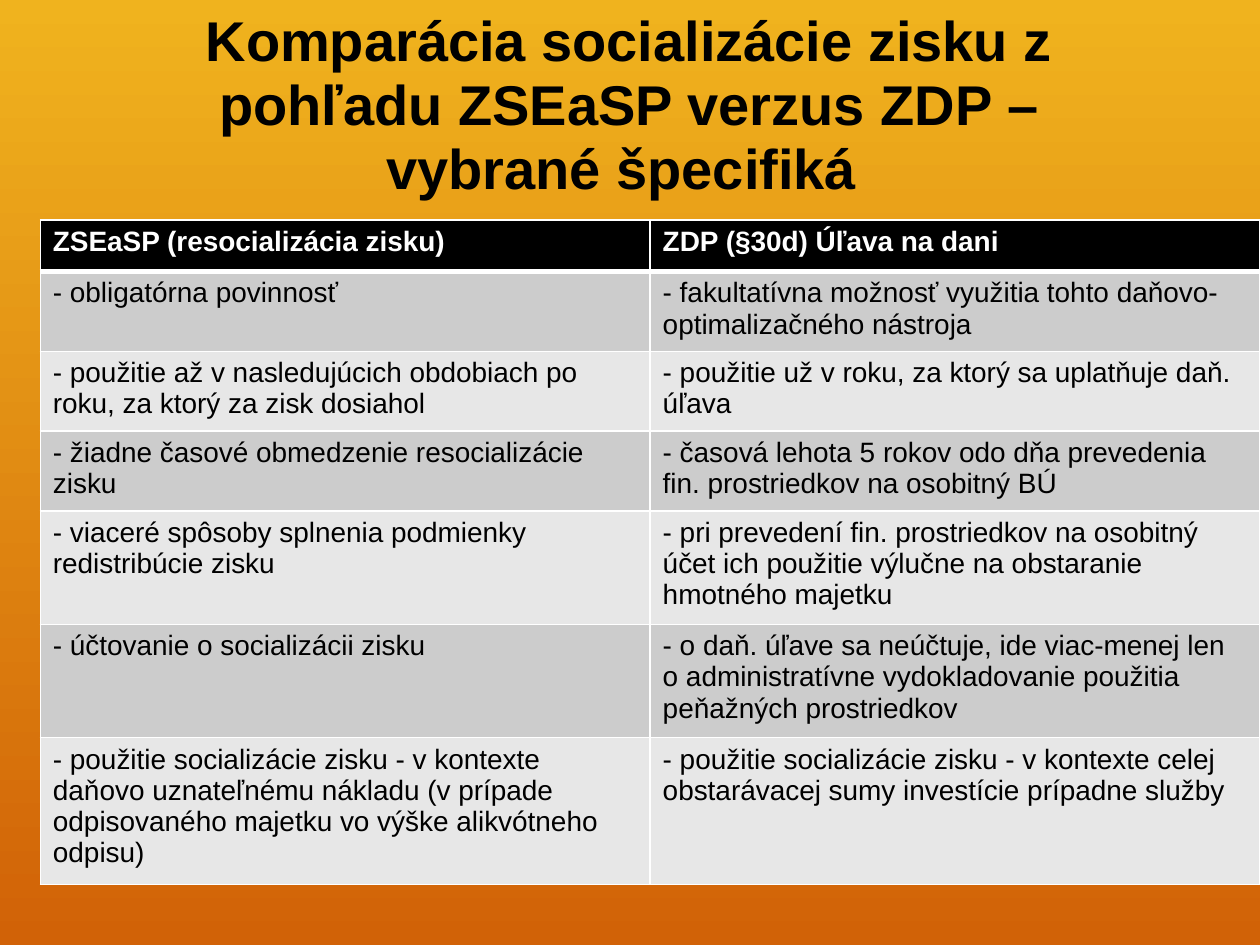
from lxml import etree
from pptx import Presentation, util as u
from pptx.dml import color
from pptx.enum import text
from pptx.oxml import ns

WIDTH, HEIGHT = u.Inches(10), u.Inches(7.5)
BLACK, WHITE = "000000", "FFFFFF"
BANDS = ["CCCCCC", "E7E7E7"]
TITLE = "Komparácia socializácie zisku z pohľadu ZSEaSP verzus ZDP – vybrané špecifiká "
COMPARISON = [
    ("ZSEaSP (resocializácia zisku)", "ZDP (§30d) Úľava na dani"),
    ("- obligatórna povinnosť",
     "- fakultatívna možnosť využitia tohto daňovo-optimalizačného nástroja"),
    ("- použitie až v nasledujúcich obdobiach po roku, za ktorý za zisk dosiahol",
     "- použitie už v roku, za ktorý sa uplatňuje daň. úľava"),
    ("- žiadne časové obmedzenie resocializácie zisku",
     "- časová lehota 5 rokov odo dňa prevedenia fin. prostriedkov na osobitný BÚ"),
    ("- viaceré spôsoby splnenia podmienky redistribúcie zisku",
     "- pri prevedení fin. prostriedkov na osobitný účet ich použitie výlučne na obstaranie "
     "hmotného majetku"),
    ("- účtovanie o socializácii zisku",
     "- o daň. úľave sa neúčtuje, ide viac-menej len o administratívne vydokladovanie použitia "
     "peňažných prostriedkov"),
    ("- použitie socializácie zisku - v kontexte daňovo uznateľnému nákladu (v prípade "
     "odpisovaného majetku vo výške alikvótneho odpisu)",
     "- použitie socializácie zisku - v kontexte celej obstarávacej sumy investície prípadne "
     "služby"),
]


def rgb(value):
    return color.RGBColor.from_string(value)


def share(left, top, width, height):
    return (int(WIDTH * left), int(HEIGHT * top), int(WIDTH * width), int(HEIGHT * height))


def apply(target, formats):
    for name, value in formats.items():
        setattr(target, name, value)


def write(paragraph, words, ink, **formats):
    run = paragraph.add_run()
    run.text = words
    apply(run.font, {"name": "Arial", **formats})
    run.font.color.rgb = rgb(ink)


def paint_background(slide):
    fill = slide.background.fill
    fill.gradient()
    fill.gradient_angle = 270
    for stop, shade in zip(fill.gradient_stops, ("F0B31E", "D16207")):
        stop.color.rgb = rgb(shade)


def draw_borders(cell, widths):
    properties = cell._tc.get_or_add_tcPr()
    for side, width in widths.items():
        line = etree.SubElement(properties, ns.qn(f"a:ln{side}"), w=str(u.Pt(width)))
        solid = etree.SubElement(line, ns.qn("a:solidFill"))
        etree.SubElement(solid, ns.qn("a:srgbClr"), val=WHITE)


def place_title(slide, box):
    heading = slide.shapes.add_textbox(*box).text_frame
    apply(heading, {"word_wrap": True, "vertical_anchor": text.MSO_ANCHOR.MIDDLE})
    paragraph = heading.paragraphs[0]
    apply(paragraph, {"alignment": text.PP_ALIGN.CENTER, "line_spacing": 0.95})
    write(paragraph, TITLE, BLACK, size=u.Pt(32), bold=True)


def place_comparison(slide, box):
    comparison = slide.shapes.add_table(len(COMPARISON), 2, *box).table
    for row, entries in enumerate(COMPARISON):
        header = row == 0
        for column, words in enumerate(entries):
            cell = comparison.cell(row, column)
            draw_borders(cell, {"L": 1, "R": 1, "T": 3 if row == 1 else 1, "B": 3 if header else 1})
            cell.fill.solid()
            cell.fill.fore_color.rgb = rgb(BLACK if header else BANDS[(row - 1) % 2])
            write(cell.text_frame.paragraphs[0], words, WHITE if header else BLACK,
                  size=u.Pt(16), bold=header)


def main():
    deck = Presentation()
    apply(deck, {"slide_width": WIDTH, "slide_height": HEIGHT})
    slide = deck.slides.add_slide(deck.slide_layouts[6])
    paint_background(slide)
    place_title(slide, share(0.085, 0.013, 0.829, 0.199))
    place_comparison(slide, share(0.032, 0.233, 0.968, 0.38))
    deck.save("out.pptx")


if __name__ == "__main__":
    main()
